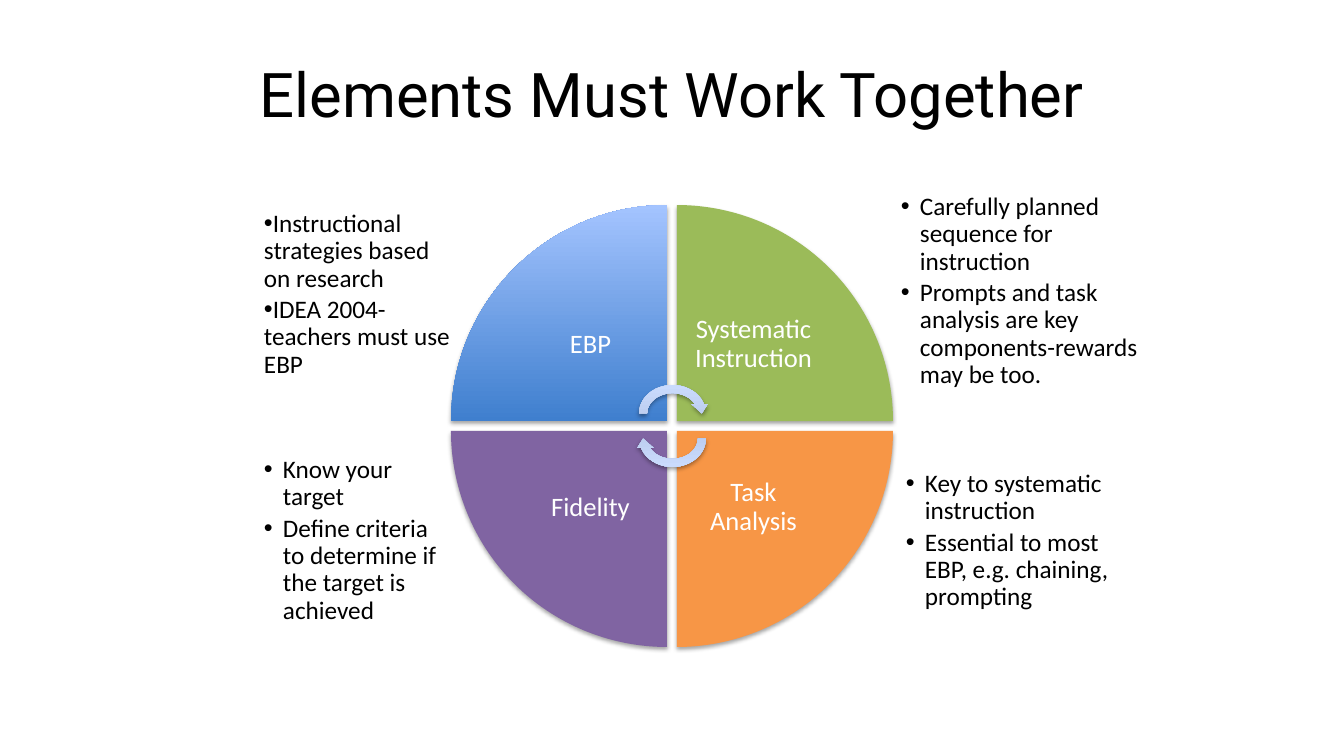
from dataclasses import dataclass

from lxml.etree import SubElement
from pptx import Presentation
from pptx.dml.color import RGBColor
from pptx.enum.shapes import MSO_SHAPE
from pptx.enum.text import MSO_ANCHOR, PP_ALIGN
from pptx.oxml.ns import qn
from pptx.util import Emu, Pt


@dataclass(frozen=True)
class Theme:
    black: str = "000000"
    white: str = "FFFFFF"
    blue: tuple = ("3F7FCE", "A4C4FF")
    green: str = "9BBB59"
    orange: str = "F79646"
    purple: str = "8064A2"
    arrow: tuple = ("ADBFE1", "CCDDFF")
    title_font: str = "Roboto"
    body_font: str = "Calibri"
    title_size: int = 44
    label_size: int = 19
    note_size: int = 18


THEME = Theme()
EMU_PER_PX = 914400 / 100.8

WHEEL_LEFT, WHEEL_TOP = 451, 205
WEDGE, GAP = 216, 10
LABEL = 153

# label, column, row, rotation, fill
QUADRANTS = [
    ("EBP", 0, 0, 0, THEME.blue),
    ("Systematic Instruction", 1, 0, 90, THEME.green),
    ("Task Analysis", 1, 1, 180, THEME.orange),
    ("Fidelity", 0, 1, 270, THEME.purple),
]

# box in px, hanging indent in px, bullets
NOTES = [
    ((257, 204, 203, 113), 0,
     ["Instructional strategies based on research",
      "IDEA 2004- teachers must use EBP"]),
    ((894, 187, 281, 113), 19,
     ["Carefully planned sequence for instruction",
      "Prompts and task analysis are key components-rewards may be too."]),
    ((899, 464, 239, 113), 19,
     ["Key to systematic instruction",
      "Essential to most EBP, e.g. chaining, prompting"]),
    ((257, 450, 203, 113), 19,
     ["Know your target",
      "Define criteria to determine if the target is achieved"]),
]

# top in px, rotation
ARROWS = [(381, 0), (406, 180)]


def px(length):
    return Emu(round(length * EMU_PER_PX))


def set_attributes(target, values):
    for name, value in values.items():
        setattr(target, name, value)


def format_font(paragraph, name, size, color):
    set_attributes(paragraph.font, {"name": name, "size": Pt(size)})
    paragraph.font.color.rgb = RGBColor.from_string(color)


def add_title(slide, text, box):
    title = slide.shapes.title
    set_attributes(title, dict(zip(("left", "top", "width", "height"), map(px, box))))
    title.text_frame.text = text
    title.text_frame.vertical_anchor = MSO_ANCHOR.MIDDLE
    paragraph = title.text_frame.paragraphs[0]
    paragraph.alignment = PP_ALIGN.CENTER
    format_font(paragraph, THEME.title_font, THEME.title_size, THEME.black)


def add_text_frame(slide, box, inset, anchor):
    frame = slide.shapes.add_textbox(*map(px, box)).text_frame
    sides = ("margin_left", "margin_top", "margin_right", "margin_bottom")
    set_attributes(frame, dict.fromkeys(sides, px(inset)))
    set_attributes(frame, {"word_wrap": True, "vertical_anchor": anchor})
    return frame


def add_bullet(paragraph, indent):
    properties = paragraph._p.get_or_add_pPr()
    properties.set("marL", str(px(indent)))
    properties.set("indent", str(-px(indent)))
    SubElement(properties, qn("a:buFont")).set("typeface", "Arial")
    SubElement(properties, qn("a:buChar")).set("char", "•")


def add_note(slide, box, indent, bullets):
    frame = add_text_frame(slide, box, 7, MSO_ANCHOR.TOP)
    for index, text in enumerate(bullets):
        paragraph = frame.add_paragraph() if index else frame.paragraphs[0]
        add_bullet(paragraph, indent)
        set_attributes(paragraph, {"text": text, "level": 1, "line_spacing": 0.9,
                                   "space_after": Pt(3)})
        format_font(paragraph, THEME.body_font, THEME.note_size, THEME.black)


def add_label(slide, text, box):
    frame = add_text_frame(slide, box, 15, MSO_ANCHOR.MIDDLE)
    paragraph = frame.paragraphs[0]
    set_attributes(paragraph, {"text": text, "line_spacing": 0.9,
                               "alignment": PP_ALIGN.CENTER})
    format_font(paragraph, THEME.body_font, THEME.label_size, THEME.white)


def fill_shape(shape, fill):
    """Fill with one colour, or with a (bottom, top) pair as a gradient."""
    if isinstance(fill, str):
        shape.fill.solid()
        shape.fill.fore_color.rgb = RGBColor.from_string(fill)
        return
    shape.fill.gradient()
    shape.fill.gradient_angle = 90
    for stop, color in zip(shape.fill.gradient_stops, fill):
        stop.color.rgb = RGBColor.from_string(color)


def add_soft_shadow(shape):
    shape.shadow.inherit = False
    effects = shape._element.spPr.find(qn("a:effectLst"))
    shadow = SubElement(effects, qn("a:outerShdw"), blurRad=str(Pt(3.1)),
                        dist=str(Pt(1.8)), dir="5400000", rotWithShape="0")
    color = SubElement(shadow, qn("a:srgbClr"), val=THEME.black)
    SubElement(color, qn("a:alpha"), val="35000")


def add_wheel_part(slide, kind, box, rotation, fill):
    shape = slide.shapes.add_shape(kind, *map(px, box))
    shape.rotation = rotation
    fill_shape(shape, fill)
    shape.line.fill.background()
    add_soft_shadow(shape)


def add_quadrant(slide, text, column, row, rotation, fill):
    """Draw a wedge with its label in the corner nearest the wheel's centre."""
    left = WHEEL_LEFT + column * (WEDGE + GAP)
    top = WHEEL_TOP + row * (WEDGE + GAP)
    add_wheel_part(slide, MSO_SHAPE.PIE_WEDGE, (left, top, WEDGE, WEDGE), rotation, fill)
    inner_left = left + (1 - column) * (WEDGE - LABEL)
    inner_top = top + (1 - row) * (WEDGE - LABEL)
    add_label(slide, text, (inner_left, inner_top, LABEL, LABEL))


def main():
    presentation = Presentation()
    set_attributes(presentation, {"slide_width": px(1344), "slide_height": px(756)})
    slide = presentation.slides.add_slide(presentation.slide_layouts[5])
    add_title(slide, "Elements Must Work Together", (67, 30, 1210, 126))
    for note in NOTES:
        add_note(slide, *note)
    for quadrant in QUADRANTS:
        add_quadrant(slide, *quadrant)
    for top, rotation in ARROWS:
        add_wheel_part(slide, MSO_SHAPE.CIRCULAR_ARROW, (635, top, 75, 65),
                       rotation, THEME.arrow)
    presentation.save("out.pptx")


if __name__ == "__main__":
    main()
